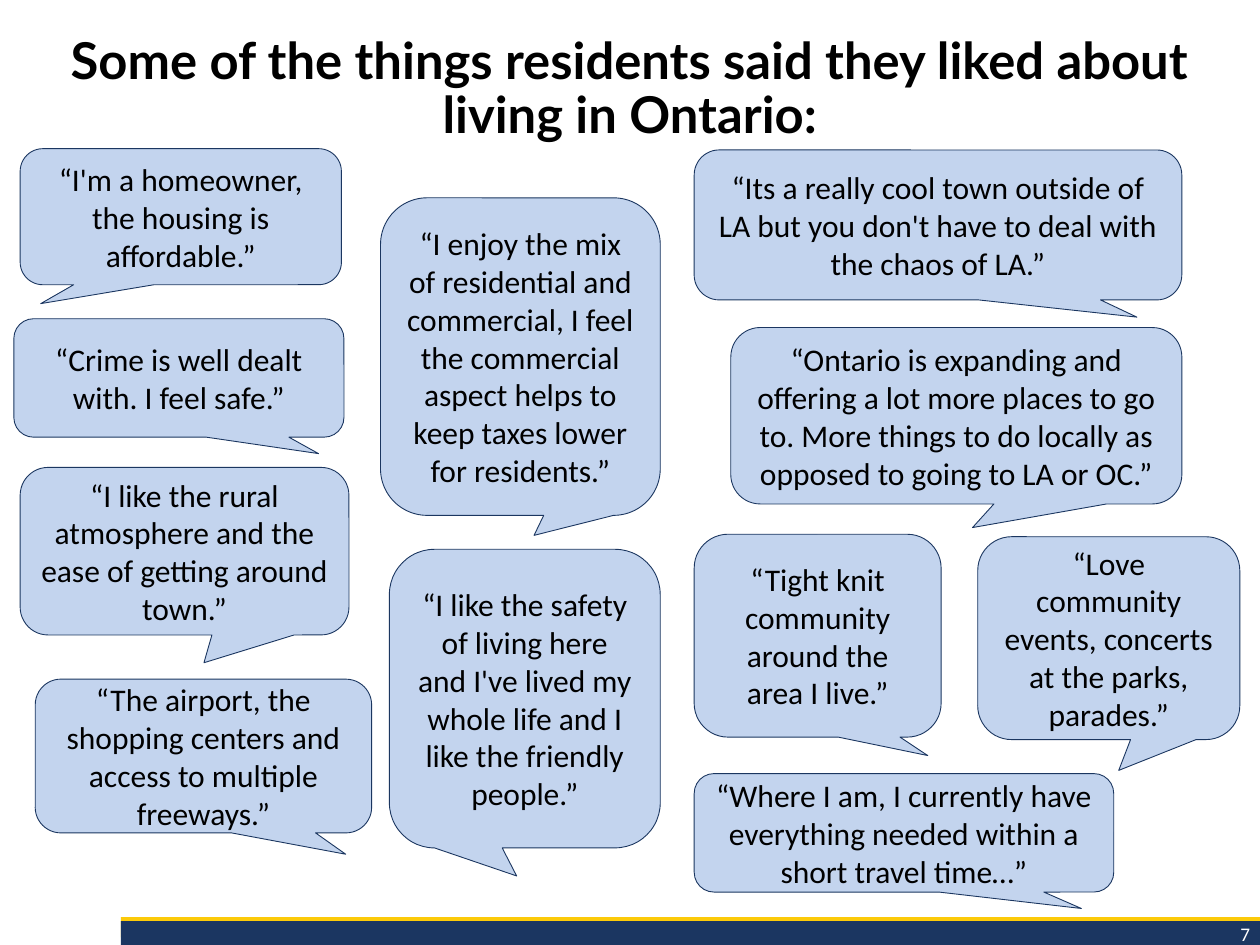
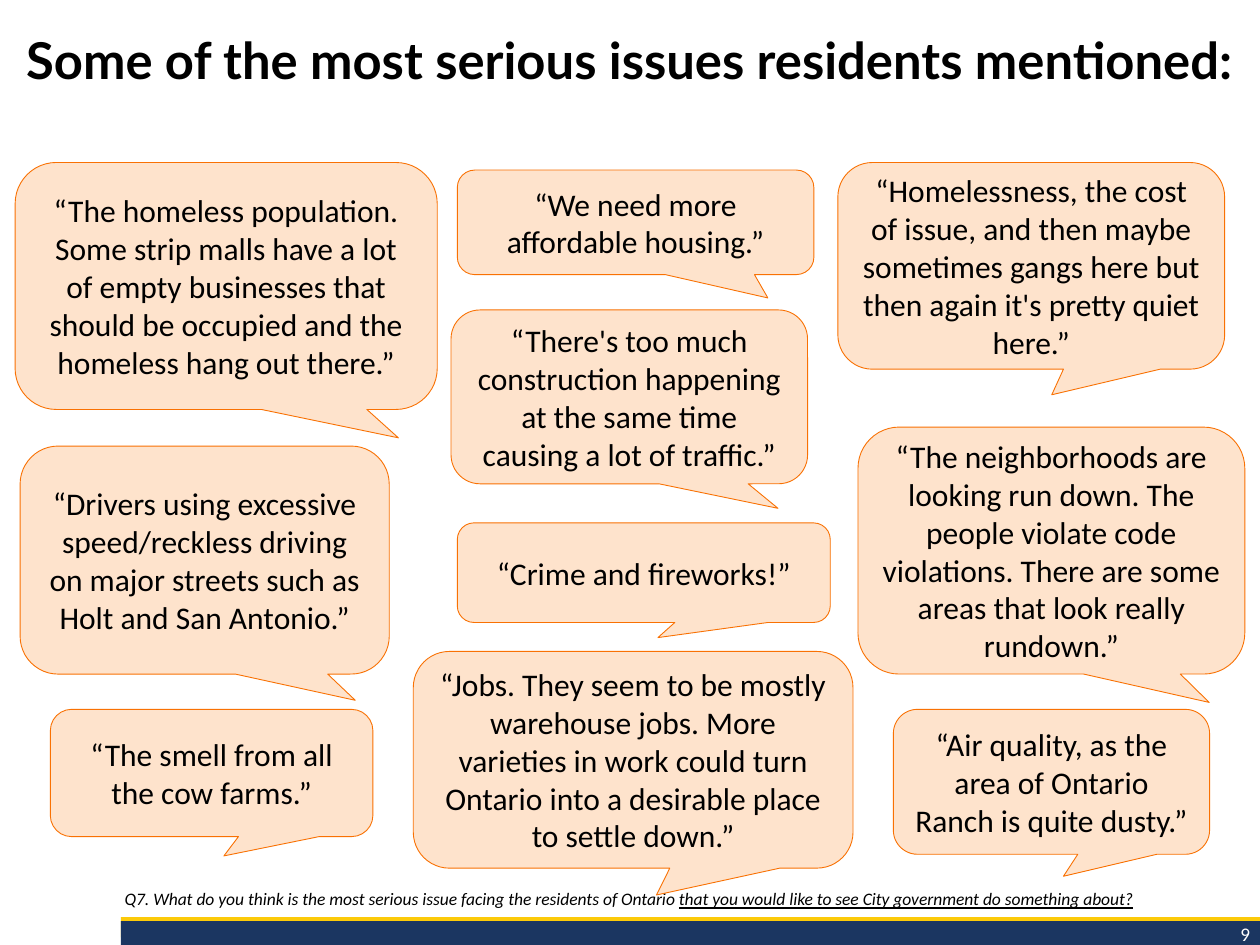
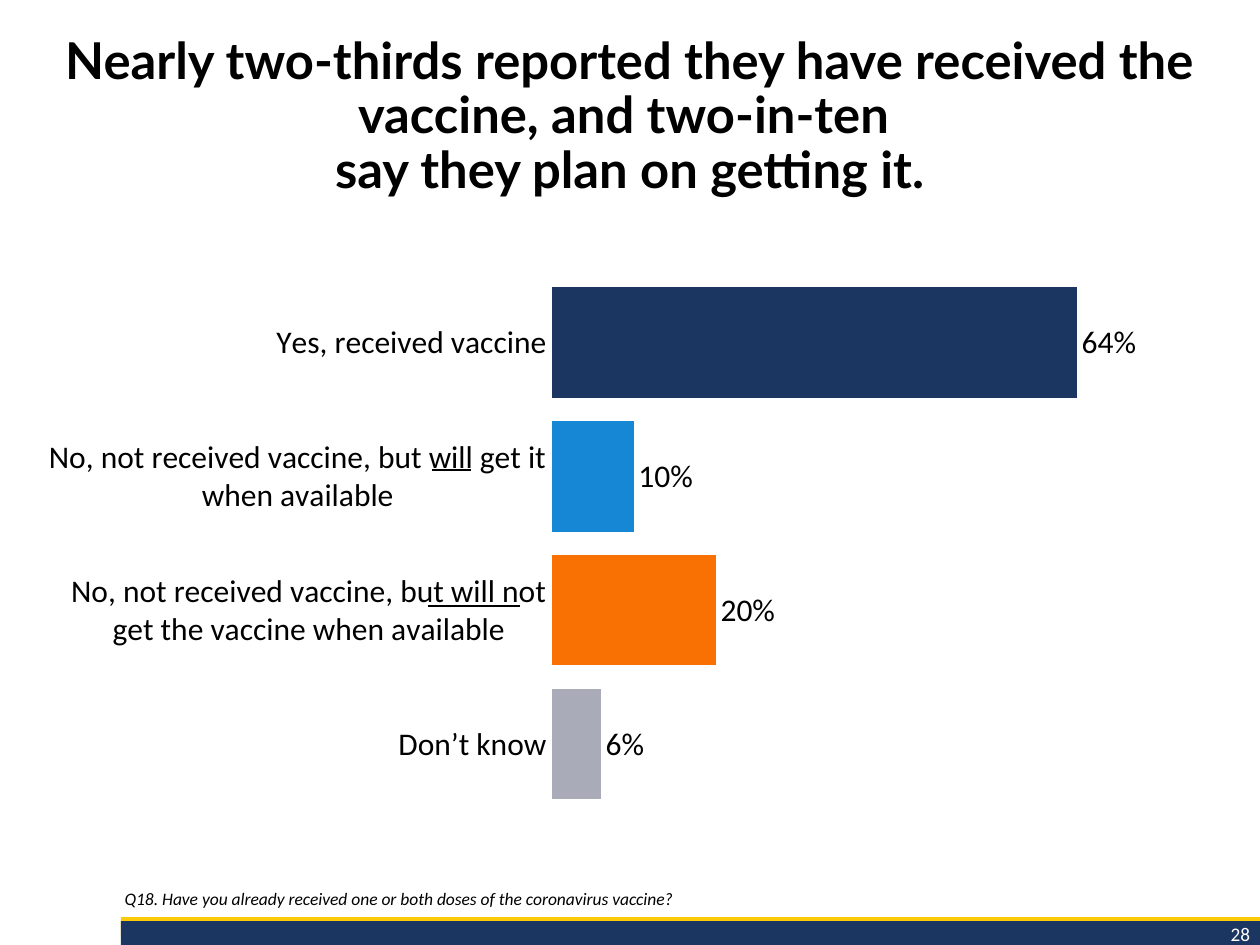
from dataclasses import dataclass
from typing import NamedTuple

import lxml.etree
import pptx
import pptx.chart.data
import pptx.dml.color
import pptx.enum.chart
import pptx.enum.shapes
import pptx.enum.text
import pptx.oxml
import pptx.oxml.ns
import pptx.util

Inches = pptx.util.Inches
Pt = pptx.util.Pt
Align = pptx.enum.text.PP_ALIGN
Anchor = pptx.enum.text.MSO_ANCHOR
Preset = pptx.enum.shapes.MSO_SHAPE


@dataclass(frozen=True)
class Theme:
    title_font: str = "Lato"
    body_font: str = "Calibri"
    title_size: float = 29
    quote_size: float = 18
    note_size: float = 10
    page_size: float = 11
    black: str = "000000"
    white: str = "FFFFFF"
    gold: str = "FCCA09"
    band_navy: str = "1B3661"
    navy: str = "1B3660"
    blue: str = "1587D4"
    orange: str = "F97103"
    grey: str = "A9ABB8"
    pale_blue: str = "C3D4EE"
    pale_orange: str = "FEE3CC"


THEME = Theme()


class Box(NamedTuple):
    left: float
    top: float
    width: float
    height: float


class Tail(NamedTuple):
    x: float
    y: float


class Quote(NamedTuple):
    box: Box
    tail: Tail
    text: str


class Answer(NamedTuple):
    label: str
    share: float
    color: str


class Underline(NamedTuple):
    start: float
    end: float
    y: float


TITLE_BOX = Box(0, 0.23, 10, 1.22)
NOTE_BOX = Box(0.89, 6.73, 9.09, 0.54)
PAGE_BOX = Box(8.54, 7.27, 1.48, 0.29)
GOLD_BAND = Box(0.96, 7.28, 9.04, 0.16)
NAVY_BAND = Box(0.96, 7.31, 9.04, 0.19)
CHART_BOX = Box(0.24, 2.05, 9.36, 4.83)
PLOT_AREA = Box(0.442, 0.029, 0.522, 0.879)

RIGHT = Tail(0.408, 0.615)
FAR_RIGHT = Tail(0.423, 0.639)
CENTER = Tail(0.038, 0.652)
CENTER_SHORT = Tail(0.053, 0.624)

LIKES = [
    Quote(Box(5.51, 1.19, 3.87, 1.19), RIGHT,
          "“Its a really cool town outside of LA but you don't have to deal with the chaos of LA.”"),
    Quote(Box(3.02, 1.57, 2.22, 2.52), Tail(0.049, 0.563),
          "“I enjoy the mix of residential and commercial, I feel the commercial aspect "
          "helps to keep taxes lower for residents.”"),
    Quote(Box(5.51, 4.24, 1.96, 1.61), Tail(0.446, 0.591),
          "“Tight knit community around the area I live.”"),
    Quote(Box(0.16, 1.18, 2.55, 1.08), Tail(-0.436, 0.639),
          "“I'm a homeowner, the housing is affordable.”"),
    Quote(Box(7.76, 4.26, 2.08, 1.61), CENTER,
          "“Love community events, concerts at the parks, parades.”"),
    Quote(Box(5.8, 2.6, 3.58, 1.4), Tail(0.036, 0.634),
          "“Ontario is expanding and offering a lot more places to go to. More things to do "
          "locally as opposed to going to LA or OC.”"),
    Quote(Box(3.09, 4.36, 2.15, 2.37), Tail(-0.03, 0.594),
          "“I like the safety of living here and I've lived my whole life and I like the "
          "friendly people.”"),
    Quote(Box(0.16, 3.71, 2.61, 1.33), Tail(0.059, 0.666),
          "“I like the rural atmosphere and the ease of getting around town.”"),
    Quote(Box(0.11, 2.53, 2.62, 0.94), FAR_RIGHT,
          "“Crime is well dealt with. I feel safe.”"),
    Quote(Box(0.28, 5.39, 2.67, 1.22), FAR_RIGHT,
          "“The airport, the shopping centers and access to multiple freeways.”"),
    Quote(Box(5.51, 6.14, 3.33, 0.94), FAR_RIGHT,
          "“Where I am, I currently have everything needed within a short travel time…”"),
]

ISSUES = [
    Quote(Box(0.12, 1.29, 3.35, 1.96), RIGHT,
          "“The homeless population. Some strip malls have a lot of empty businesses that "
          "should be occupied and the homeless hang out there.”"),
    Quote(Box(0.16, 3.54, 2.93, 1.81), RIGHT,
          "“Drivers using excessive speed/reckless driving on major streets such as Holt "
          "and San Antonio.”"),
    Quote(Box(6.81, 3.39, 3.07, 1.96), RIGHT,
          "“The neighborhoods are looking run down. The people violate code violations. "
          "There are some areas that look really rundown.”"),
    Quote(Box(0.4, 5.63, 2.56, 1.01), CENTER, "“The smell from all the cow farms.”"),
    Quote(Box(6.65, 1.29, 3.07, 1.64), CENTER_SHORT,
          "“Homelessness, the cost of issue, and then maybe sometimes gangs here but then "
          "again it's pretty quiet here.”"),
    Quote(Box(3.28, 5.17, 3.49, 1.72), CENTER_SHORT,
          "“Jobs. They seem to be mostly warehouse jobs. More varieties in work could turn "
          "Ontario into a desirable place to settle down.”"),
    Quote(Box(3.63, 1.35, 2.83, 0.83), Tail(0.371, 0.723),
          "“We need more affordable housing.”"),
    Quote(Box(7.09, 5.63, 2.51, 1.15), CENTER,
          "“Air quality, as the area of Ontario Ranch is quite dusty.”"),
    Quote(Box(3.58, 2.46, 2.83, 1.38), Tail(0.417, 0.641),
          "“There's too much construction happening at the same time causing a lot of traffic.”"),
    Quote(Box(3.63, 4.15, 2.96, 0.79), CENTER, "“Crime and fireworks!”"),
]

ANSWERS = [
    Answer("Yes, received vaccine", 0.64, THEME.navy),
    Answer("No, not received vaccine, but will get it when available", 0.10, THEME.blue),
    Answer("No, not received vaccine, but will not get the vaccine when available", 0.20,
           THEME.orange),
    Answer("Don’t know", 0.06, THEME.grey),
]
UNDERLINES = [Underline(3.43, 3.74, 3.73), Underline(3.4, 4.13, 4.81)]


def rgb(color: str) -> pptx.dml.color.RGBColor:
    return pptx.dml.color.RGBColor.from_string(color)


def place(box: Box) -> tuple:
    return tuple(Inches(length) for length in box)


def style_font(font, size: float, color: str = THEME.black, name: str = THEME.body_font) -> None:
    font.name = name
    font.size = Pt(size)
    font.color.rgb = rgb(color)


def add_run(paragraph, text: str, size: float, color: str = THEME.black,
            name: str = THEME.body_font):
    run = paragraph.add_run()
    run.text = text
    style_font(run.font, size, color, name)
    return run


def add_paragraph_box(slide, box: Box, align=Align.LEFT, anchor=Anchor.TOP):
    frame = slide.shapes.add_textbox(*place(box)).text_frame
    frame.word_wrap = True
    frame.vertical_anchor = anchor
    paragraph = frame.paragraphs[0]
    paragraph.alignment = align
    return paragraph


def add_preset(slide, preset, box: Box, fill: str):
    preset_shape = slide.shapes.add_shape(preset, *place(box))
    preset_shape.shadow.inherit = False
    preset_shape.fill.solid()
    preset_shape.fill.fore_color.rgb = rgb(fill)
    return preset_shape


def add_slide(deck, title_lines: list[str], page: int):
    slide = deck.slides.add_slide(deck.slide_layouts[6])
    for box, color in ((GOLD_BAND, THEME.gold), (NAVY_BAND, THEME.band_navy)):
        add_preset(slide, Preset.RECTANGLE, box, color).line.fill.background()
    add_run(add_paragraph_box(slide, PAGE_BOX, Align.RIGHT), str(page),
            THEME.page_size, THEME.white)
    heading = add_paragraph_box(slide, TITLE_BOX, Align.CENTER)
    heading.line_spacing = 0.9
    for index, line in enumerate(title_lines):
        if index:
            heading.add_line_break()
        add_run(heading, line, THEME.title_size, name=THEME.title_font).font.bold = True
    return slide


def add_question(slide, text: str, underlined: str = "") -> None:
    question = add_paragraph_box(slide, NOTE_BOX, anchor=Anchor.BOTTOM)
    question.line_spacing = 0.9
    add_run(question, text, THEME.note_size).font.italic = True
    if underlined:
        emphasis = add_run(question, underlined, THEME.note_size)
        emphasis.font.italic = True
        emphasis.font.underline = True


def add_quotes(slide, quotes: list[Quote], fill: str, outline: str) -> None:
    for quote in quotes:
        bubble = add_preset(slide, Preset.ROUNDED_RECTANGULAR_CALLOUT, quote.box, fill)
        bubble.adjustments[0] = quote.tail.x
        bubble.adjustments[1] = quote.tail.y
        bubble.line.color.rgb = rgb(outline)
        bubble.line.width = Pt(0.5)
        frame = bubble.text_frame
        frame.word_wrap = True
        frame.vertical_anchor = Anchor.MIDDLE
        frame.paragraphs[0].alignment = Align.CENTER
        add_run(frame.paragraphs[0], quote.text, THEME.quote_size)


def set_plot_area(chart, area: Box) -> None:
    plot_area = chart.element.find(".//" + pptx.oxml.ns.qn("c:plotArea"))
    for old_layout in plot_area.findall(pptx.oxml.ns.qn("c:layout")):
        plot_area.remove(old_layout)
    settings = [("layoutTarget", "inner"), ("xMode", "edge"), ("yMode", "edge"),
                *zip("xywh", area)]
    layout = lxml.etree.Element(pptx.oxml.ns.qn("c:layout"))
    manual = lxml.etree.SubElement(layout, pptx.oxml.ns.qn("c:manualLayout"))
    for tag, value in settings:
        lxml.etree.SubElement(manual, pptx.oxml.ns.qn("c:" + tag)).set("val", str(value))
    plot_area.insert(0, layout)


def add_answer_chart(slide, answers: list[Answer]) -> None:
    data = pptx.chart.data.CategoryChartData(number_format="0%")
    data.categories = [answer.label for answer in answers]
    data.add_series("Series 1", [answer.share for answer in answers])
    chart = slide.shapes.add_chart(pptx.enum.chart.XL_CHART_TYPE.BAR_CLUSTERED,
                                   *place(CHART_BOX), data).chart
    chart.has_legend = False
    chart.has_title = False
    style_font(chart.font, THEME.note_size)
    set_plot_area(chart, PLOT_AREA)

    labels_axis = chart.category_axis
    labels_axis.reverse_order = True
    labels_axis.major_tick_mark = pptx.enum.chart.XL_TICK_MARK.NONE
    labels_axis.format.line.fill.background()
    style_font(labels_axis.tick_labels.font, THEME.quote_size)

    share_axis = chart.value_axis
    share_axis.visible = False
    share_axis.has_major_gridlines = False
    share_axis.minimum_scale = 0
    share_axis.maximum_scale = 0.75
    share_axis.major_unit = 0.15

    plot = chart.plots[0]
    plot.gap_width = 21
    plot.vary_by_categories = False
    bars = plot.series[0]
    bars.format.fill.solid()
    bars.format.fill.fore_color.rgb = rgb(THEME.navy)
    for index, answer in enumerate(answers):
        fill = bars.points[index].format.fill
        fill.solid()
        fill.fore_color.rgb = rgb(answer.color)
    shares = bars.data_labels
    shares.show_value = True
    shares.number_format = "0%"
    shares.number_format_is_linked = False
    shares.position = pptx.enum.chart.XL_LABEL_POSITION.OUTSIDE_END
    style_font(shares.font, THEME.quote_size)


def add_underline(slide, underline: Underline) -> None:
    y = Inches(underline.y)
    stroke = slide.shapes.add_connector(pptx.enum.shapes.MSO_CONNECTOR.STRAIGHT,
                                        Inches(underline.start), y, Inches(underline.end), y)
    stroke.line.color.rgb = rgb(THEME.black)
    stroke.line.width = Pt(1.5)
    lxml.etree.SubElement(stroke.element.spPr, pptx.oxml.ns.qn("a:effectLst"))


def main() -> None:
    deck = pptx.Presentation()
    deck.slide_width = Inches(10)
    deck.slide_height = Inches(7.5)

    likes = add_slide(
        deck, ["Some of the things residents said they liked about living in Ontario:"], 7)
    add_quotes(likes, LIKES, THEME.pale_blue, THEME.navy)

    issues = add_slide(deck, ["Some of the most serious issues residents mentioned:"], 9)
    add_question(
        issues,
        "Q7. What do you think is the most serious issue facing the residents of Ontario ",
        "that you would like to see City government do something about?")
    add_quotes(issues, ISSUES, THEME.pale_orange, THEME.orange)

    vaccine = add_slide(
        deck, ["Nearly two-thirds reported they have received the vaccine, and two-in-ten ",
               "say they plan on getting it."], 28)
    add_question(
        vaccine, "Q18. Have you already received one or both doses of the coronavirus vaccine?")
    add_answer_chart(vaccine, ANSWERS)
    for underline in UNDERLINES:
        add_underline(vaccine, underline)

    deck.save("out.pptx")


if __name__ == "__main__":
    main()
